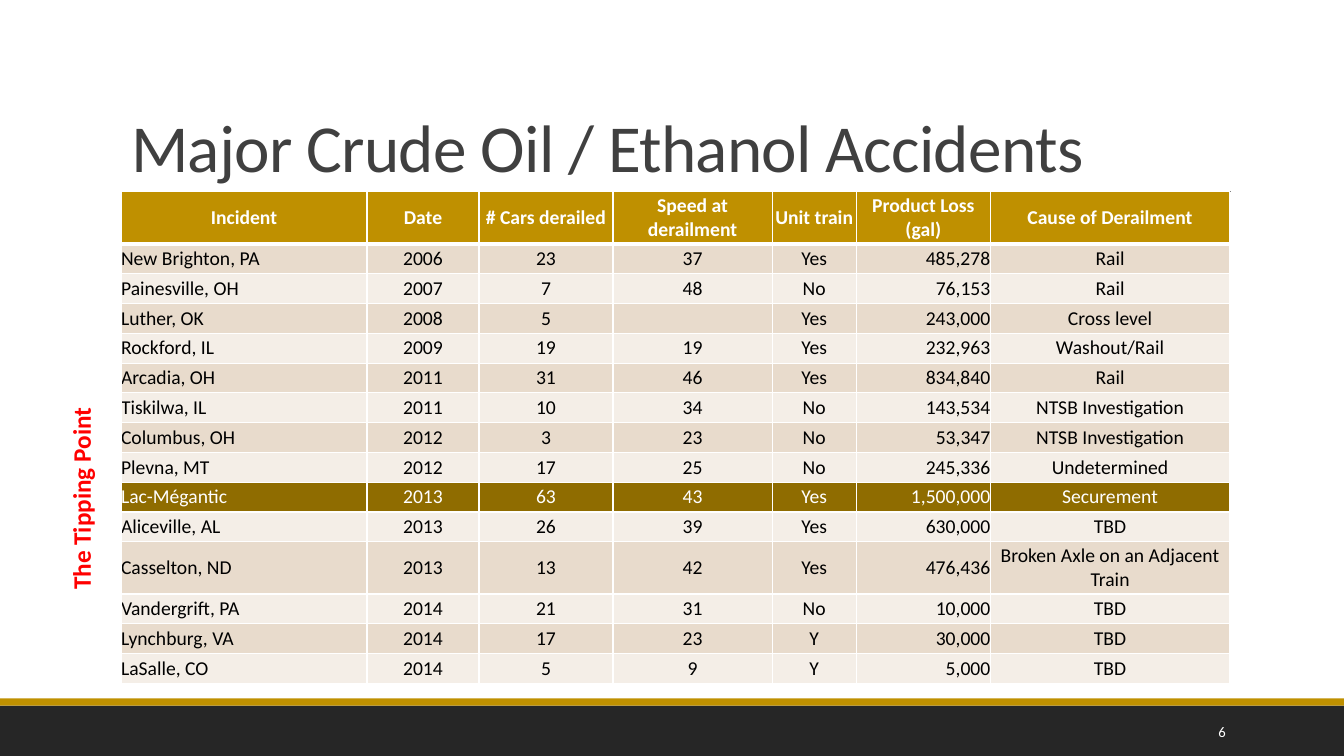
from dataclasses import dataclass

from pptx import Presentation
from pptx import util as u
from pptx.dml.color import RGBColor
from pptx.enum import shapes, text
from pptx.oxml import parse_xml
from pptx.oxml.ns import nsdecls
from lxml import etree

LEFT, MID, RIGHT = text.PP_ALIGN.LEFT, text.PP_ALIGN.CENTER, text.PP_ALIGN.RIGHT


@dataclass(frozen=True)
class Theme:
    font: str = "Calibri"
    white: str = "FFFFFF"
    black: str = "000000"
    gold: str = "BF9000"
    deep: str = "8F6C00"
    sand: str = "E8DBCC"
    cream: str = "F4EEE7"
    dark: str = "262626"
    ink: str = "404040"
    grey: str = "808080"
    red: str = "FF0000"
    head: float = 48
    note: float = 18
    cell: float = 14
    page: float = 10.5


class Deck:
    def __init__(self, theme):
        self.theme = theme
        self.prs = Presentation()
        self.prs.slide_width, self.prs.slide_height = u.Cm(33.87), u.Cm(19.05)
        self.slide = self.prs.slides.add_slide(self.prs.slide_layouts[5])

    def place(self, item, box):
        item.left, item.top, item.width, item.height = map(u.Cm, box)

    def style(self, para, size, color, bold=False, align=LEFT):
        para.alignment = align
        for run in para.runs:
            run.font.name = self.theme.font
            run.font.size = u.Pt(size)
            run.font.bold = bold
            run.font.color.rgb = RGBColor.from_string(color)

    def title(self, words, box):
        item = self.slide.shapes.title
        self.place(item, box)
        frame = item.text_frame
        frame.text = words
        frame.word_wrap = True
        frame.auto_size = text.MSO_AUTO_SIZE.NONE
        frame.vertical_anchor = text.MSO_ANCHOR.BOTTOM
        para = frame.paragraphs[0]
        para.line_spacing = 0.85
        self.style(para, self.theme.head, self.theme.ink)
        para.runs[0].font._element.set("spc", "-50")

    def bar(self, box, color):
        item = self.slide.shapes.add_shape(shapes.MSO_SHAPE.RECTANGLE, *map(u.Cm, box))
        item.shadow.inherit = False
        item.fill.solid()
        item.fill.fore_color.rgb = RGBColor.from_string(color)
        item.line.fill.background()

    def rule(self, ends, color, width):
        item = self.slide.shapes.add_connector(
            shapes.MSO_CONNECTOR.STRAIGHT, *map(u.Cm, ends))
        item.line.color.rgb = RGBColor.from_string(color)
        item.line.width = u.Pt(width)
        item._element.spPr.append(parse_xml(f"<a:effectLst {nsdecls('a')}/>"))

    def label(self, words, box, size, color, bold=False, align=LEFT, turn=0, wrap=True):
        item = self.slide.shapes.add_textbox(*map(u.Cm, box))
        item.rotation = turn
        frame = item.text_frame
        frame.text = words
        frame.word_wrap = wrap
        frame.vertical_anchor = text.MSO_ANCHOR.MIDDLE
        self.style(frame.paragraphs[0], size, color, bold, align)

    def edge(self, cell, side, width):
        cell._tc.get_or_add_tcPr().append(parse_xml(
            f'<a:ln{side} {nsdecls("a")} w="{u.Pt(width)}"><a:solidFill>'
            f'<a:srgbClr val="{self.theme.white}"/></a:solidFill></a:ln{side}>'))

    def fill(self, cell, words, fill, color, bold, align, top, low):
        for side, width in (("L", 1), ("R", 1), ("T", top), ("B", low)):
            self.edge(cell, side, width)
        cell.fill.solid()
        cell.fill.fore_color.rgb = RGBColor.from_string(fill)
        cell.margin_left = cell.margin_right = cell.margin_top = cell.margin_bottom = 0
        cell.vertical_anchor = text.MSO_ANCHOR.MIDDLE
        cell.text_frame.text = words
        para = cell.text_frame.paragraphs[0]
        self.style(para, self.theme.cell, color, bold, align)
        if not words:
            etree.SubElement(para._p, para._p.tag[:-1] + "endParaRPr",
                             sz=str(self.theme.cell * 100))

    def table(self, rows, box, cols, high, tall, mark):
        t = self.theme
        grid = self.slide.shapes.add_table(len(rows), len(cols), *map(u.Cm, box)).table
        for col, width in zip(grid.columns, cols):
            col.width = u.Cm(width)
        for r, row in enumerate(rows):
            grid.rows[r].height = u.Cm(tall if r in (0, TALL) else high)
            if r == 0:
                fill, color = t.gold, t.white
            elif r == mark:
                fill, color = t.deep, t.white
            else:
                fill, color = (t.sand if r % 2 else t.cream), t.black
            for c, words in enumerate(row):
                align = MID if r == 0 else {0: LEFT, 5: RIGHT}.get(c, MID)
                self.fill(grid.cell(r, c), words, fill, color, r == 0, align,
                          3 if r == 1 else 1, 3 if r == 0 else 1)


ROWS = [line.split("|") for line in """\
Incident|Date|# Cars derailed|Speed at derailment|Unit train|Product Loss (gal)|Cause of Derailment
New Brighton, PA|2006|23|37|Yes|485,278|Rail
Painesville, OH|2007|7|48|No|76,153|Rail
Luther, OK|2008|5||Yes|243,000|Cross level
Rockford, IL|2009|19|19|Yes|232,963|Washout/Rail
Arcadia, OH|2011|31|46|Yes|834,840|Rail
Tiskilwa, IL|2011|10|34|No|143,534|NTSB Investigation
Columbus, OH|2012|3|23|No|53,347|NTSB Investigation
Plevna, MT|2012|17|25|No|245,336|Undetermined
Lac-Mégantic|2013|63|43|Yes|1,500,000|Securement
Aliceville, AL|2013|26|39|Yes|630,000|TBD
Casselton, ND|2013|13|42|Yes|476,436|Broken Axle on an Adjacent Train
Vandergrift, PA|2014|21|31|No|10,000|TBD
Lynchburg, VA|2014|17|23|Y|30,000|TBD
LaSalle, CO|2014|5|9|Y|5,000|TBD""".splitlines()]
COLS = [6.2, 2.82, 3.38, 4.01, 2.12, 3.38, 6.03]
MARK, TALL = 9, 11


def main():
    t = Theme()
    deck = Deck(t)
    deck.bar((0, 17.78, 33.87, 1.27), t.dark)
    deck.bar((0, 17.6, 33.87, 0.18), t.gold)
    deck.rule((3.32, 4.83, 31.02, 4.83), t.grey, 0.5)
    deck.table(ROWS, (3.05, 4.83, 27.94, 12.37), COLS, 0.75, 1.32, MARK)
    deck.title("Major Crude Oil / Ethanol Accidents", (3.05, 0.79, 27.94, 4.04))
    deck.label("6", (27.5, 17.92, 3.64, 1.02), t.page, t.white, align=RIGHT)
    deck.label("The Tipping Point", (-0.53, 12.04, 5.13, 1.02), t.note, t.red,
               bold=True, turn=270, wrap=False)
    deck.prs.save("out.pptx")


if __name__ == "__main__":
    main()
